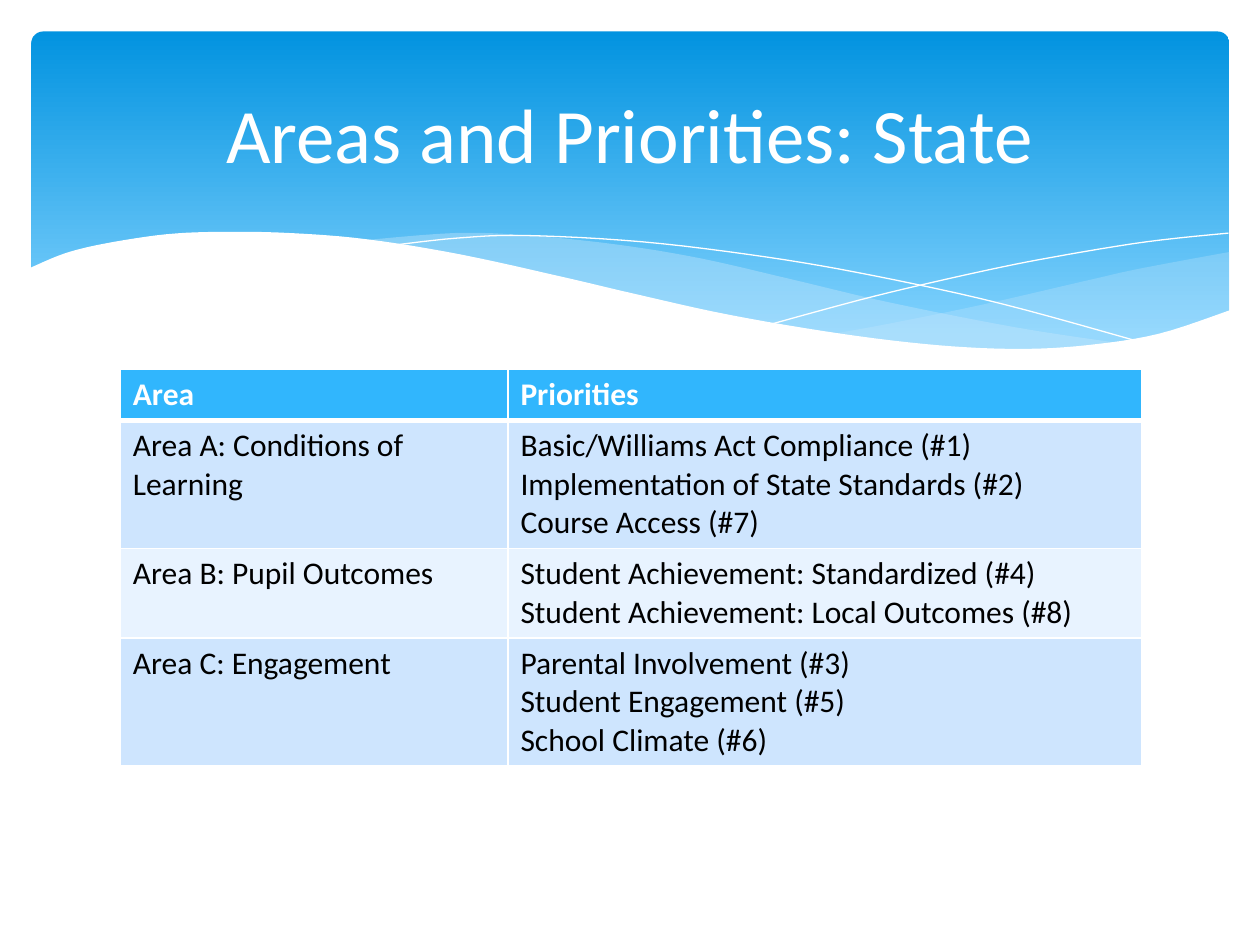
from lxml import etree
from pptx import Presentation
from pptx.dml.color import RGBColor
from pptx.enum import shapes, text
from pptx.oxml import ns
from pptx.util import Pt

WHITE = RGBColor(0xFF, 0xFF, 0xFF)
BLACK = RGBColor(0, 0, 0)
DEEP = RGBColor(0x02, 0x93, 0xE0)
SKY = RGBColor(0x83, 0xD3, 0xFE)
VEIL = RGBColor(0xC6, 0xE7, 0xFC)
HEAD = RGBColor(0x31, 0xB6, 0xFD)
BANDS = [RGBColor(0xCE, 0xE5, 0xFE), RGBColor(0xE8, 0xF3, 0xFF)]
FONT = "Calibri"

# Knots of the waves, in points
RIGHT_TOP = [(702.7, 144), (652, 153.4), (620, 160.6), (561, 174.2), (508, 185), (476, 190.8)]
RIGHT_LOW = [(476, 190.8), (527, 197.3), (578, 200), (628, 197.3), (668, 189.4), (702.7, 177.8)]
MID_TOP = [(643, 196.6), (581, 187.2), (508, 172.8), (453, 159.8), (400, 147.6),
           (352, 139.7), (302, 134.6), (260, 133.2), (206, 137.5)]
MID_LOW = [(206, 137.5), (261, 146.2), (323, 159.8), (382, 172.8), (445, 185.8),
           (510, 195.8), (565, 200.2), (603, 200.2), (643, 196.6)]
FALL = [(222.5, 140.4), (261, 136.1), (300, 134.6), (367, 138.2), (438, 146.9),
        (500, 157.7), (572, 173.5), (653, 195.8)]
RISE = [(441.5, 185), (500, 169.2), (559, 155.5), (602, 146.9), (655, 138.2), (702, 133.2)]
EDGE = [(703.4, 177.1), (662, 190.8), (621, 197.3), (582, 199.4), (536, 197.3), (481, 190.8),
        (417, 180), (362, 167.8), (322, 158.4), (263, 145.4), (210, 136.8), (166, 133.2),
        (127, 132.5), (95, 133.9), (61, 139), (37.4, 144.7), (16.6, 153.4)]
BASE = [(16.6, 236.9), (703.4, 236.9)]

ROWS = [
    ("Area", ["Priorities"]),
    ("Area A: Conditions of Learning",
     ["Basic/Williams Act Compliance (#1)", "Implementation of State Standards (#2)",
      "Course Access (#7)"]),
    ("Area B: Pupil Outcomes",
     ["Student Achievement: Standardized (#4)", "Student Achievement: Local Outcomes (#8)"]),
    ("Area C: Engagement",
     ["Parental Involvement (#3)", "Student Engagement (#5)", "School Climate (#6)"]),
]


def smooth(knots, steps=6):
    """Points of a Catmull-Rom curve through the knots."""
    ends = [knots[0]] + knots + [knots[-1]]
    pts = [knots[0]]
    for a, b, c, d in zip(ends, ends[1:], ends[2:], ends[3:]):
        for i in range(1, steps + 1):
            t = i / steps
            pts.append(tuple(
                q + t * (r - p + t * (2 * p - 5 * q + 4 * r - s + t * (3 * (q - r) + s - p))) / 2
                for p, q, r, s in zip(a, b, c, d)))
    return pts


def wave(slide, pts, fill=None, alpha=100):
    """Closed area with a fill, or an open white hairline without one."""
    pts = [(Pt(x), Pt(y)) for x, y in pts]
    pen = slide.shapes.build_freeform(*pts[0])
    pen.add_line_segments(pts[1:], close=fill is not None)
    shape = pen.convert_to_shape()
    shape.shadow.inherit = False
    if fill is None:
        shape.fill.background()
        shape.line.color.rgb = WHITE
        shape.line.width = Pt(0)
        return
    shape.line.fill.background()
    shape.fill.solid()
    shape.fill.fore_color.rgb = fill
    if alpha < 100:
        tint = shape.fill._xPr.find(".//" + ns.qn("a:srgbClr"))
        etree.SubElement(tint, ns.qn("a:alpha"), val=str(alpha * 1000))


def banner(slide):
    box = slide.shapes.add_shape(shapes.MSO_SHAPE.ROUNDED_RECTANGLE,
                                 Pt(18), Pt(18), Pt(684.5), Pt(194.5))
    box.adjustments[0] = 0.034
    box.shadow.inherit = False
    box.line.fill.background()
    box.fill.gradient()
    box.fill.gradient_angle = 270
    for stop, tone, pos in zip(box.fill.gradient_stops, (DEEP, SKY), (0, 0.9)):
        stop.color.rgb = tone
        stop.position = pos


def write(frame, lines, size, color, bold=False, align=None):
    for i, line in enumerate(lines):
        para = frame.add_paragraph() if i else frame.paragraphs[0]
        para.alignment = align
        run = para.add_run()
        run.text = line
        font = run.font
        font.name, font.size, font.bold = FONT, Pt(size), bold
        font.color.rgb = color


def border(cell, side, width):
    props = cell._tc.get_or_add_tcPr()
    line = etree.SubElement(props, ns.qn("a:ln" + side), w=str(Pt(width)))
    fill = etree.SubElement(line, ns.qn("a:solidFill"))
    etree.SubElement(fill, ns.qn("a:srgbClr"), val=str(WHITE))


def grid(slide):
    table = slide.shapes.add_table(len(ROWS), 2, Pt(68.75), Pt(211),
                                   Pt(583.5), Pt(116.8)).table
    for col, width in zip(table.columns, (221.5, 362)):
        col.width = Pt(width)
    for r, (area, goals) in enumerate(ROWS):
        head = r == 0
        for c, lines in enumerate(([area], goals)):
            cell = table.cell(r, c)
            for side in "LRTB":
                thick = (r, side) in ((0, "B"), (1, "T"))
                border(cell, side, 3 if thick else 1)
            cell.fill.solid()
            cell.fill.fore_color.rgb = HEAD if head else BANDS[(r - 1) % 2]
            write(cell.text_frame, lines, 18, WHITE if head else BLACK, head)


def title(slide):
    box = slide.shapes.add_textbox(Pt(36), Pt(26.6), Pt(648), Pt(98.6))
    frame = box.text_frame
    frame.word_wrap = True
    frame.vertical_anchor = text.MSO_ANCHOR.MIDDLE
    write(frame, ["Areas and Priorities: State"], 44, WHITE, align=text.PP_ALIGN.CENTER)


def main():
    deck = Presentation()
    deck.slide_width, deck.slide_height = Pt(720), Pt(540)
    slide = deck.slides.add_slide(deck.slide_layouts[6])

    # Banner with its waves
    banner(slide)
    wave(slide, smooth(RIGHT_TOP) + smooth(RIGHT_LOW), VEIL, 29)
    wave(slide, smooth(MID_TOP) + smooth(MID_LOW), VEIL, 40)
    wave(slide, smooth(FALL))
    wave(slide, smooth(RISE))
    wave(slide, smooth(EDGE) + BASE, WHITE)

    # Content
    grid(slide)
    title(slide)
    deck.save("out.pptx")


if __name__ == "__main__":
    main()
